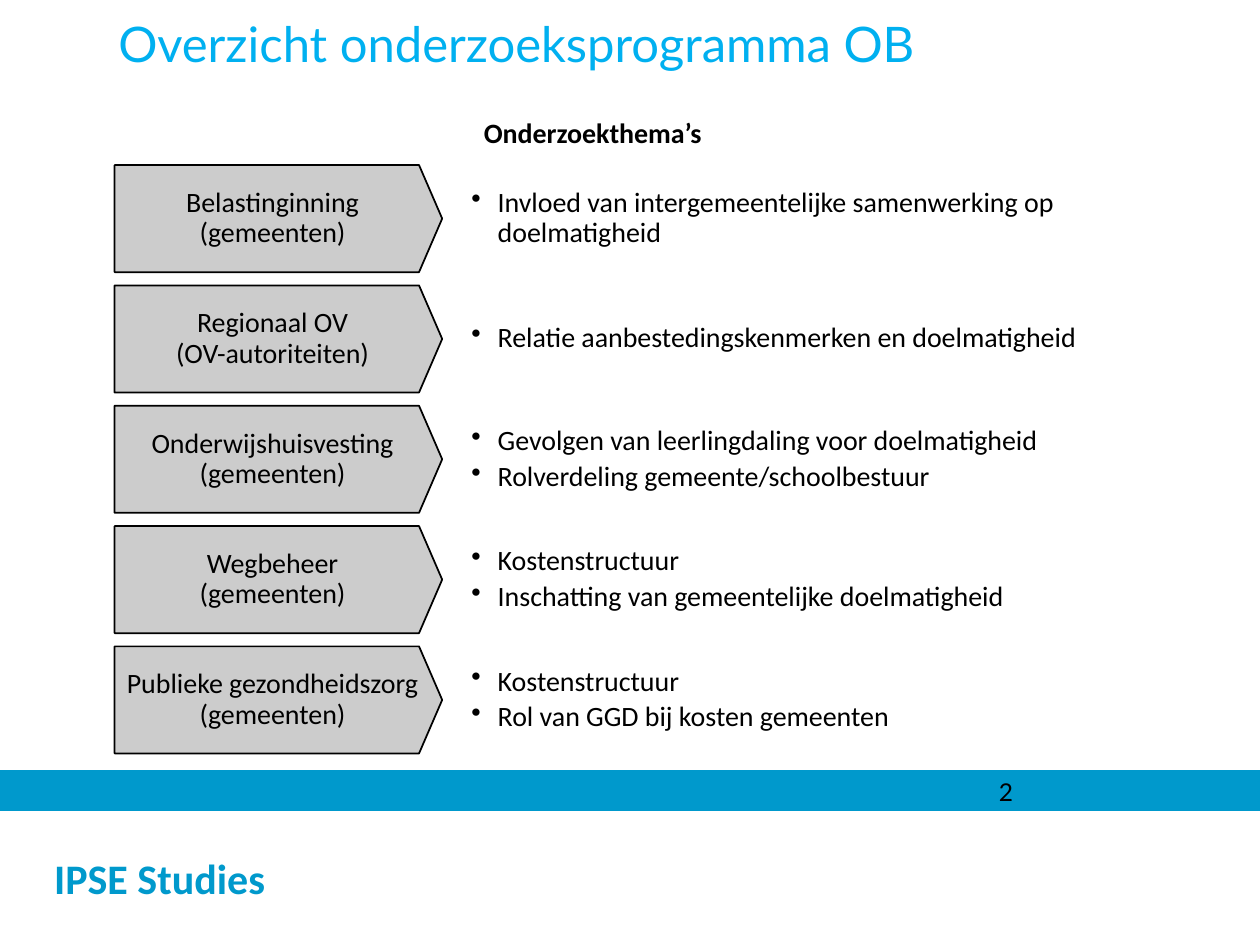
import pptx
import pptx.util
import pptx.dml.color
import pptx.enum.shapes
import pptx.enum.text
import pptx.oxml.ns
import lxml.etree

Inches, Pt = pptx.util.Inches, pptx.util.Pt
RECT = pptx.enum.shapes.MSO_SHAPE.RECTANGLE
PENTAGON = pptx.enum.shapes.MSO_SHAPE.PENTAGON
ALIGN = pptx.enum.text.PP_ALIGN
MIDDLE = pptx.enum.text.MSO_ANCHOR.MIDDLE
rgb = pptx.dml.color.RGBColor.from_string


def add_block(kind, left, top, width, height, fill, line=None, line_width=1):
    block = slide.shapes.add_shape(kind, Inches(left), Inches(top), Inches(width), Inches(height))
    block.shadow.inherit = False
    block.fill.solid()
    block.fill.fore_color.rgb = rgb(fill)
    if line:
        block.line.color.rgb = rgb(line)
        block.line.width = Pt(line_width)
    else:
        block.line.fill.background()
    return block


def write(shape, text, size=16, color="000000", font="Calibri", bold=False,
          align=ALIGN.LEFT, spacing=None, inset=None):
    frame = shape.text_frame
    frame.word_wrap = True
    if inset is not None:
        frame.margin_left = frame.margin_right = Inches(inset)
        frame.margin_top = frame.margin_bottom = Inches(inset)
    frame.text = text
    for paragraph in frame.paragraphs:
        paragraph.alignment = align
        if spacing:
            paragraph.line_spacing = spacing
        for run in paragraph.runs:
            run.font.size = Pt(size)
            run.font.name = font
            run.font.bold = bold
            run.font.color.rgb = rgb(color)
    return frame


presentation = pptx.Presentation()
presentation.slide_width, presentation.slide_height = Inches(10), Inches(7.5)
slide = presentation.slides.add_slide(presentation.slide_layouts[6])

footer = add_block(RECT, 0, 6.44, 10, 1.06, "FFFFFF")
footer_frame = write(footer, "IPSE Studies", size=24, color="0099CC", bold=True)
footer_frame.margin_left = Inches(0.43)
footer_frame.vertical_anchor = MIDDLE

add_block(RECT, 0, 6.12, 10, 0.31, "0099CC", "0099CC", 0.75)
page_number = slide.shapes.add_textbox(Inches(7.83), Inches(6.12), Inches(2.08), Inches(0.25))
write(page_number, "2", size=14, font="Lato")

programme = [
    ("Belastinginning\n(gemeenten)",
     "Invloed van intergemeentelijke samenwerking op doelmatigheid"),
    ("Regionaal OV\n(OV-autoriteiten)",
     "Relatie aanbestedingskenmerken en doelmatigheid"),
    ("Onderwijshuisvesting\n(gemeenten)",
     "Gevolgen van leerlingdaling voor doelmatigheid\nRolverdeling gemeente/schoolbestuur"),
    ("Wegbeheer\n(gemeenten)",
     "Kostenstructuur\nInschatting van gemeentelijke doelmatigheid"),
    ("Publieke gezondheidszorg\n(gemeenten)",
     "Kostenstructuur\nRol van GGD bij kosten gemeenten"),
]
first_top, row_height, row_gap = 1.31, 0.85, 0.105

for index, (sector, themes) in enumerate(programme):
    top = first_top + index * (row_height + row_gap)
    arrow = add_block(PENTAGON, 0.91, top, 2.6, row_height, "CCCCCC", "000000")
    arrow.adjustments[0] = 0.216
    arrow_frame = write(arrow, sector, align=ALIGN.CENTER, spacing=0.9, inset=0.08)
    arrow_frame.vertical_anchor = MIDDLE

    theme_list = add_block(RECT, 3.74, top, 5.31, row_height, "FFFFFF")
    theme_frame = write(theme_list, themes, spacing=0.9, inset=0)
    theme_frame.vertical_anchor = MIDDLE
    for position, theme in enumerate(theme_frame.paragraphs):
        properties = theme._p.get_or_add_pPr()
        properties.set("marL", str(Inches(0.21)))
        properties.set("indent", str(Inches(-0.21)))
        bullet = lxml.etree.SubElement(properties, pptx.oxml.ns.qn("a:buChar"))
        bullet.set("char", "•")
        if position:
            theme.space_before = Pt(3.2)

title = slide.shapes.add_textbox(Inches(0.34), Inches(0.06), Inches(8.81), Inches(0.57))
title_frame = write(title, "Overzicht onderzoeksprogramma OB", size=28, color="00B0F0", font="Lato")
title_frame.paragraphs[0]._p.get_or_add_pPr().set("marL", str(Inches(0.5)))

heading = add_block(RECT, 3.84, 0.64, 5.31, row_height, "FFFFFF")
heading_frame = write(heading, "Onderzoekthema’s", bold=True, spacing=0.9, inset=0)
heading_frame.vertical_anchor = MIDDLE

presentation.save("out.pptx")
